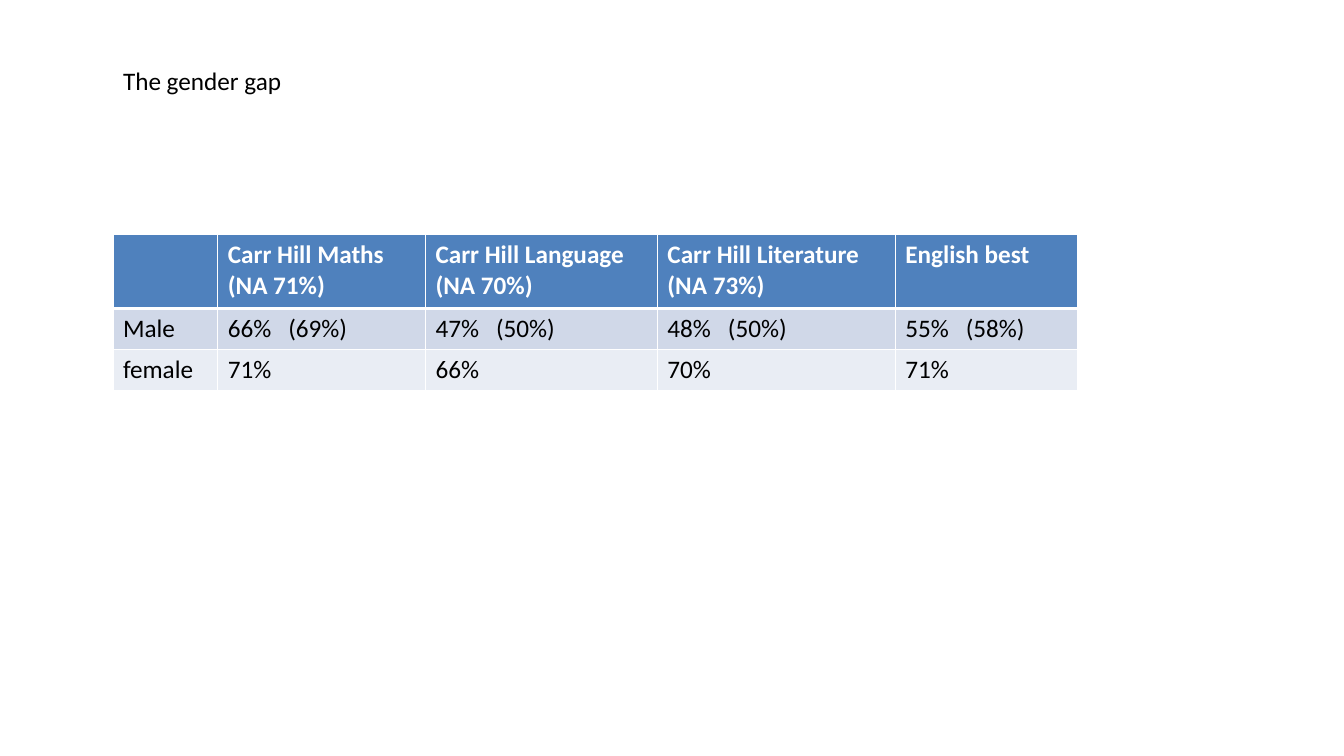
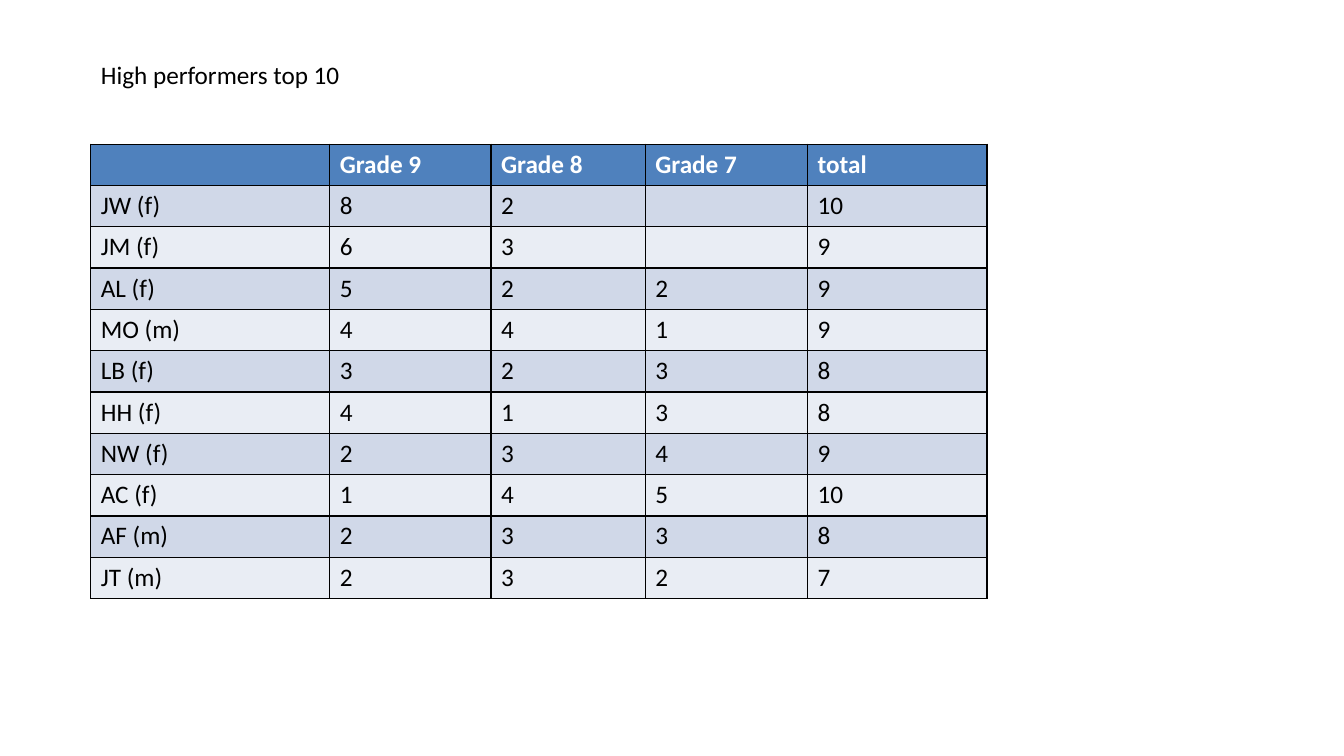
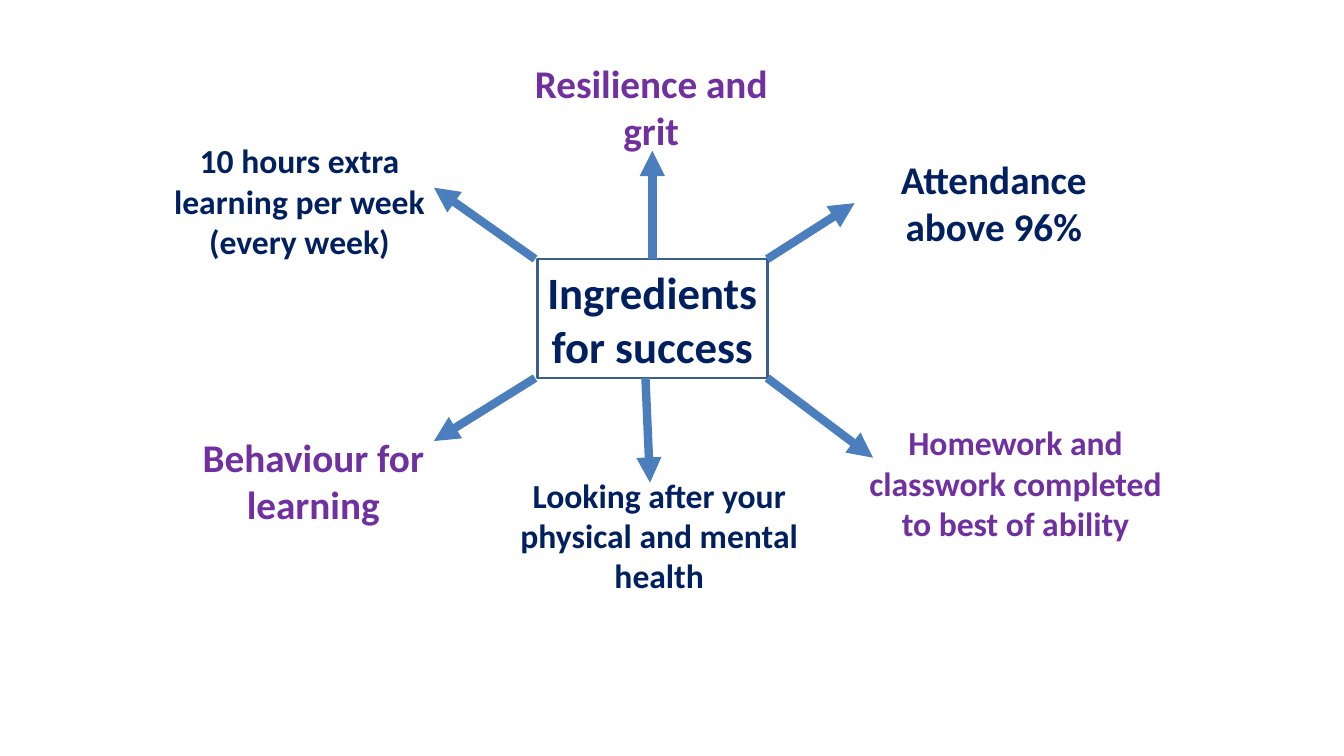
from collections import namedtuple

from lxml import etree
from pptx import Presentation
from pptx.dml.color import RGBColor
from pptx.enum.shapes import MSO_CONNECTOR, MSO_SHAPE
from pptx.enum.text import MSO_ANCHOR, MSO_AUTO_SIZE, PP_ALIGN
from pptx.oxml.ns import qn
from pptx.util import Inches, Pt

STRAIGHT = MSO_CONNECTOR.STRAIGHT
RECT = MSO_SHAPE.RECTANGLE
TOP, MIDDLE = MSO_ANCHOR.TOP, MSO_ANCHOR.MIDDLE
NO_FIT = MSO_AUTO_SIZE.NONE
LEFT, CENTER = PP_ALIGN.LEFT, PP_ALIGN.CENTER

FONT = "Calibri"
BLACK, WHITE = "000000", "FFFFFF"
HEADER, BANDS = "4F81BD", ("D0D8E8", "E9EDF4")
NAVY, PURPLE = "002060", "7030A0"
OUTLINE, ARROW = "3A5F8C", "4B7EBC"
ROW_HEIGHT = 0.41
TAB_STOP = 0.6
TITLE_ONLY, BLANK = 5, 6

Box = namedtuple("Box", "left top width height")
Spoke = namedtuple("Spoke", "text size color start tip label")


def rgb(value):
    return RGBColor.from_string(value)


def inches(*values):
    return [Inches(v) for v in values]


def style(p, size, color, bold=False, align=LEFT):
    p.alignment = align
    p.font.name = FONT
    p.font.size = Pt(size)
    p.font.bold = bold
    p.font.color.rgb = rgb(color)


def add_title(s, text, box):
    sp = s.shapes.title
    sp.left, sp.top, sp.width, sp.height = inches(*box)
    tf = sp.text_frame
    tf.text = text
    tf.vertical_anchor = TOP
    tf.auto_size = NO_FIT
    style(tf.paragraphs[0], 18, BLACK)


def set_borders(cell, color, top, bottom):
    tcPr = cell._tc.get_or_add_tcPr()
    for side, width in zip("LRTB", (1, 1, top, bottom)):
        ln = etree.SubElement(tcPr, qn(f"a:ln{side}"), w=str(Pt(width)))
        fill = etree.SubElement(ln, qn("a:solidFill"))
        etree.SubElement(fill, qn("a:srgbClr"), val=color)


def add_tab_stop(p):
    tabs = etree.SubElement(p._p.get_or_add_pPr(), qn("a:tabLst"))
    etree.SubElement(tabs, qn("a:tab"), pos=str(Inches(TAB_STOP)), algn="l")


def add_grid(s, left, top, widths, rows, border, head_height=ROW_HEIGHT, head_line=1):
    heights = [head_height] + [ROW_HEIGHT] * (len(rows) - 1)
    box = Box(left, top, sum(widths), sum(heights))
    table = s.shapes.add_table(len(rows), len(widths), *inches(*box)).table
    for column, width in zip(table.columns, widths):
        column.width = Inches(width)
    for i, (row, height, values) in enumerate(zip(table.rows, heights, rows)):
        row.height = Inches(height)
        for cell, value in zip(row.cells, values):
            set_borders(cell, border, head_line if i == 1 else 1, head_line if i == 0 else 1)
            cell.fill.solid()
            cell.fill.fore_color.rgb = rgb(BANDS[(i - 1) % 2] if i else HEADER)
            cell.text = value
            for p in cell.text_frame.paragraphs:
                if "\t" in value:
                    add_tab_stop(p)
                style(p, 18, BLACK if i else WHITE, bold=i == 0)


def add_label(sp, text, size, color):
    tf = sp.text_frame
    tf.word_wrap = True
    tf.text = text
    style(tf.paragraphs[0], size, color, True, CENTER)


def add_arrow(s, start, tip):
    line = s.shapes.add_connector(STRAIGHT, *inches(*start, *tip))
    line.line.color.rgb = rgb(ARROW)
    line.line.width = Pt(6)
    etree.SubElement(line.line._get_or_add_ln(), qn("a:tailEnd"), type="triangle")
    etree.SubElement(line._element.spPr, qn("a:effectLst"))
    return line


def add_spoke_diagram(s, box, text, spokes):
    def place(x, y):
        return box.left + x * box.width, box.top + y * box.height

    hub = s.shapes.add_shape(RECT, *inches(*box))
    hub.shadow.inherit = False
    hub.fill.background()
    hub.line.color.rgb = rgb(OUTLINE)
    hub.line.width = Pt(2)
    add_label(hub, text, 32, NAVY)
    tf = hub.text_frame
    tf.vertical_anchor = MIDDLE
    tf.margin_left = tf.margin_right = Inches(0.08)

    for spoke in spokes:
        arrow = add_arrow(s, place(*spoke.start), place(*spoke.tip))
        if spoke.start == (0.5, 0):
            arrow.begin_connect(hub, 0)
        x, y, w, h = spoke.label
        size = (w * box.width, h * box.height)
        label = s.shapes.add_textbox(*inches(*place(x, y), *size))
        add_label(label, spoke.text, spoke.size, spoke.color)


def gender_slide(prs):
    s = prs.slides.add_slide(prs.slide_layouts[TITLE_ONLY])
    add_title(s, "The gender gap", Box(1.12, 0.6, 5.94, 0.4))
    rows = [
        ("", "Carr Hill Maths\n(NA 71%)", "Carr Hill Language\n(NA 70%)",
         "Carr Hill Literature\n(NA 73%)", "English best"),
        ("Male", "66%\t(69%)", "47%\t(50%)", "48%\t(50%)", "55%\t(58%)"),
        ("female", "71%", "66%", "70%", "71%"),
    ]
    add_grid(s, 1.12, 2.33, (1.04, 2.06, 2.3, 2.36, 1.81), rows, WHITE, 0.73, 3)


def performers_slide(prs):
    s = prs.slides.add_slide(prs.slide_layouts[TITLE_ONLY])
    add_title(s, "High performers top 10", Box(0.9, 0.54, 11.28, 0.71))
    rows = [
        ("", "Grade 9", "Grade 8", "Grade 7", "total"),
        ("JW (f)", "8", "2", "", "10"),
        ("JM (f)", "6", "3", "", "9"),
        ("AL (f)", "5", "2", "2", "9"),
        ("MO (m)", "4", "4", "1", "9"),
        ("LB (f)", "3", "2", "3", "8"),
        ("HH (f)", "4", "1", "3", "8"),
        ("NW (f)", "2", "3", "4", "9"),
        ("AC (f)", "1", "4", "5", "10"),
        ("AF (m)", "2", "3", "3", "8"),
        ("JT (m)", "2", "3", "2", "7"),
    ]
    add_grid(s, 0.9, 1.43, (2.37, 1.6, 1.53, 1.61, 1.78), rows, BLACK)


def success_slide(prs):
    s = prs.slides.add_slide(prs.slide_layouts[BLANK])
    spokes = [
        Spoke("Attendance above 96%", 28, NAVY,
              (1, 0), (1.38, -0.47), (1.38, -0.91, 1.21, 0.88)),
        Spoke("Homework and classwork completed to best of ability", 24, PURPLE,
              (1, 1), (1.46, 1.67), (1.38, 1.33, 1.4, 1.11)),
        Spoke("Behaviour for learning", 28, PURPLE,
              (-0.01, 1), (-0.45, 1.53), (-1.5, 1.42, 1.05, 0.88)),
        Spoke("10 hours extra learning per week (every week)", 24, NAVY,
              (-0.01, 0), (-0.45, -0.6), (-1.66, -1.04, 1.25, 1.11)),
        Spoke("Resilience and grit", 28, PURPLE,
              (0.5, 0), (0.5, -0.91), (-0.11, -1.72, 1.21, 0.88)),
        Spoke("Looking after your physical and mental health", 24, NAVY,
              (0.47, 1), (0.49, 1.88), (-0.17, 1.77, 1.4, 1.11)),
    ]
    add_spoke_diagram(s, Box(5.33, 2.57, 2.28, 1.18), "Ingredients for success", spokes)


def main():
    prs = Presentation()
    prs.slide_width, prs.slide_height = inches(13.33, 7.5)
    gender_slide(prs)
    performers_slide(prs)
    success_slide(prs)
    prs.save("out.pptx")


if __name__ == "__main__":
    main()
